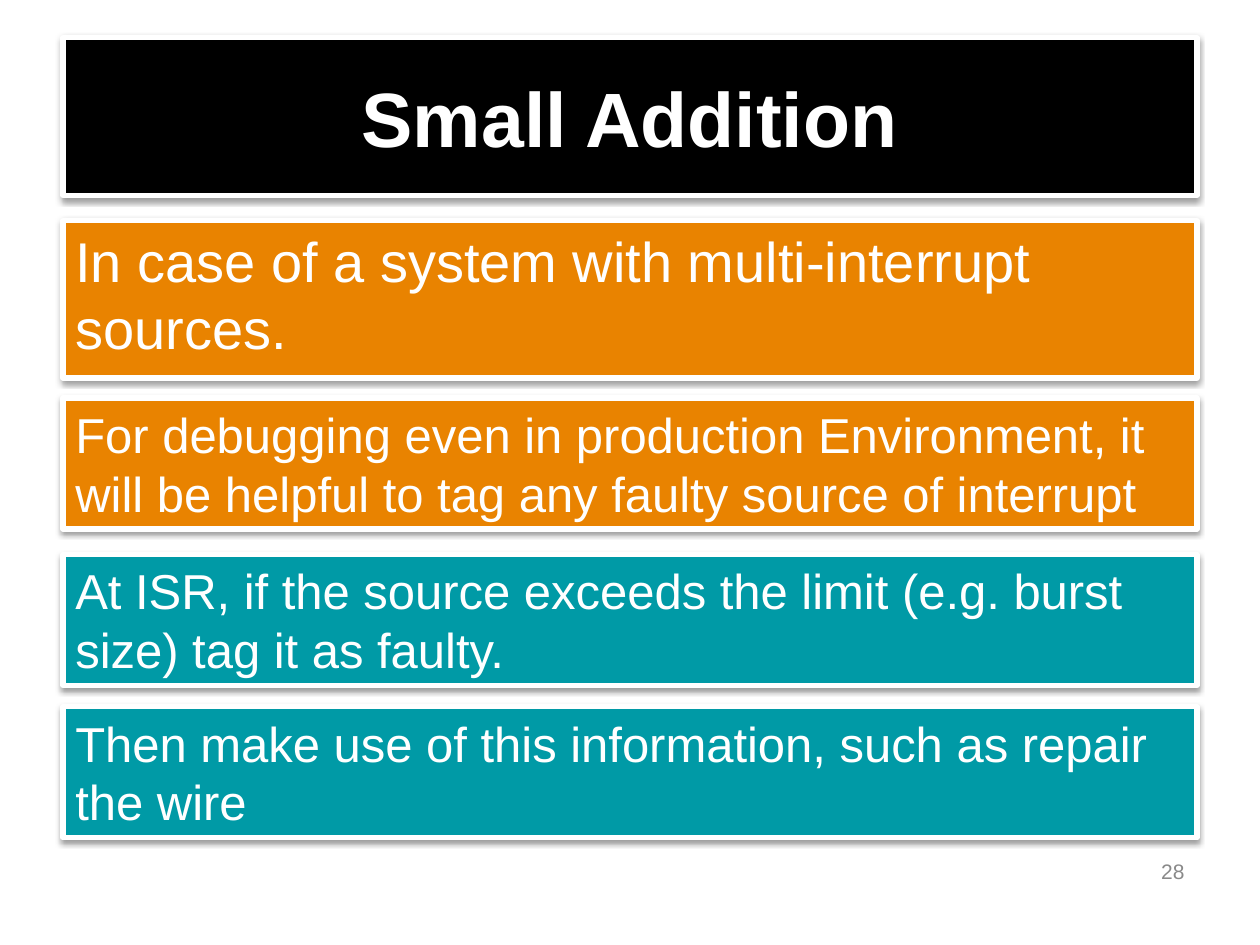
from dataclasses import dataclass

from lxml.etree import SubElement
from pptx import Presentation
from pptx.dml.color import RGBColor
from pptx.enum.shapes import MSO_SHAPE
from pptx.enum.text import MSO_ANCHOR as Anchor, PP_ALIGN as Align
from pptx.oxml.ns import qn
from pptx.util import Inches, Pt


@dataclass(frozen=True)
class Theme:
    font: str = "Arial"
    black: RGBColor = RGBColor.from_string("000000")
    white: RGBColor = RGBColor.from_string("FFFFFF")
    orange: RGBColor = RGBColor.from_string("E98300")
    teal: RGBColor = RGBColor.from_string("009AA6")
    gray: RGBColor = RGBColor.from_string("898989")
    title_size: int = 44
    lead_size: int = 32
    body_size: int = 28
    number_size: int = 12
    border: int = 3


THEME = Theme()
LEFT, WIDTH = 0.5, 9


def write_text(shape, text, size, color, align=Align.LEFT, anchor=Anchor.TOP, bold=False):
    frame = shape.text_frame
    for name, value in {"word_wrap": True, "vertical_anchor": anchor}.items():
        setattr(frame, name, value)
    para = frame.paragraphs[0]
    para.alignment = align
    span = para.add_run()
    span.text = text
    font_format = {"name": THEME.font, "size": Pt(size), "bold": bold}
    for name, value in font_format.items():
        setattr(span.font, name, value)
    span.font.color.rgb = color


def add_soft_shadow(shape):
    shape.shadow.inherit = False
    effects = shape._element.spPr.find(qn("a:effectLst"))
    shadow = SubElement(effects, qn("a:outerShdw"), blurRad=str(Pt(3.1)),
                        dist=str(Pt(1.6)), dir="5400000", rotWithShape="0")
    color = SubElement(shadow, qn("a:srgbClr"), val=str(THEME.black))
    SubElement(color, qn("a:alpha"), val="38000")


def add_panel(page, box, fill, text, size, **text_format):
    panel = page.shapes.add_shape(MSO_SHAPE.RECTANGLE, *map(Inches, box))
    panel.fill.solid()
    panel.fill.fore_color.rgb = fill
    panel.line.color.rgb = THEME.white
    panel.line.width = Pt(THEME.border)
    add_soft_shadow(panel)
    write_text(panel, text, size, THEME.white, **text_format)


def add_page_number(page, box, number):
    label = page.shapes.add_textbox(*map(Inches, box))
    write_text(label, number, THEME.number_size, THEME.gray,
               align=Align.RIGHT, anchor=Anchor.BOTTOM)


def main():
    deck = Presentation()
    deck.slide_width, deck.slide_height = Inches(10), Inches(7.5)
    page = deck.slides.add_slide(deck.slide_layouts[6])

    add_panel(page, (LEFT, 0.3, WIDTH, 1.25), THEME.black, "Small Addition",
              THEME.title_size, align=Align.CENTER, anchor=Anchor.MIDDLE, bold=True)
    add_panel(page, (LEFT, 1.75, WIDTH, 1.25), THEME.orange,
              "In case of a system with multi-interrupt sources.", THEME.lead_size)

    points = [
        (3.16, THEME.orange, "For debugging even in production Environment, it will be "
                             "helpful to tag any faulty source of interrupt"),
        (4.4, THEME.teal, "At ISR, if the source exceeds the limit (e.g. burst size) "
                          "tag it as faulty."),
        (5.61, THEME.teal, "Then make use of this information, such as repair the wire"),
    ]
    for top, fill, text in points:
        add_panel(page, (LEFT, top, WIDTH, 1.04), fill, text, THEME.body_size)

    add_page_number(page, (8.64, 6.66, 0.86, 0.4), "28")
    deck.save("out.pptx")


if __name__ == "__main__":
    main()
